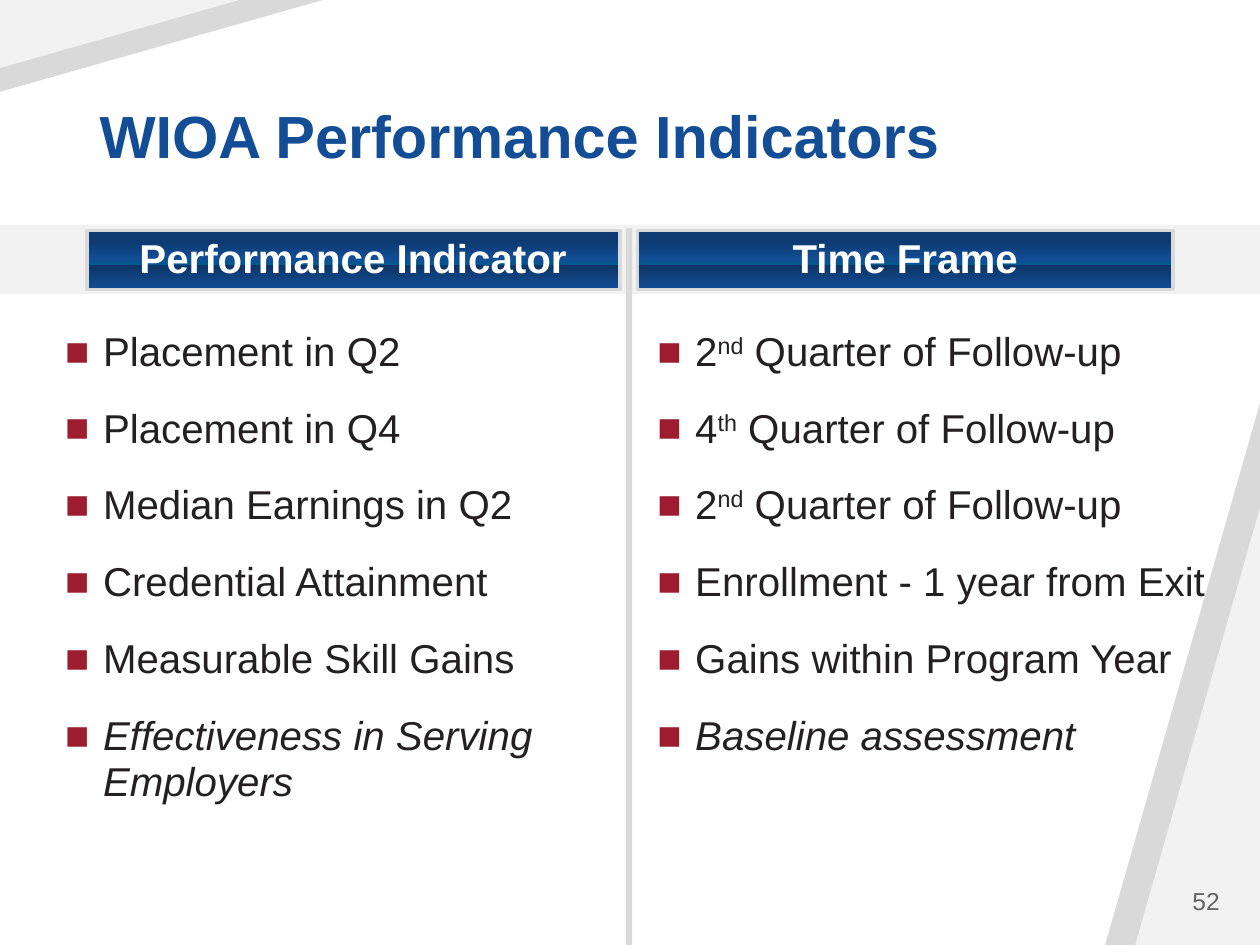
import pptx
import pptx.util
import pptx.dml.color
import pptx.enum.shapes
import pptx.enum.text
import pptx.oxml
import pptx.oxml.ns
from lxml import etree

Pt = pptx.util.Pt
ALIGN = pptx.enum.text.PP_ALIGN
ANCHOR = pptx.enum.text.MSO_ANCHOR
RECT = pptx.enum.shapes.MSO_SHAPE.RECTANGLE

# Content: items are lists of (text, style) runs
TITLE = "WIOA Performance Indicators"
PAGE = "52"
REST = (" Quarter of Follow-up", "")
COLS = [
    {"head": "Performance Indicator", "bar": (49.7, 304.6), "body": (30.2, 303.8),
     "items": [
         [("Placement in Q2", "")],
         [("Placement in Q4", "")],
         [("Median Earnings in Q2", "")],
         [("Credential Attainment", "")],
         [("Measurable Skill Gains", "")],
         [("Effectiveness in Serving Employers", "italic")]]},
    {"head": "Time Frame", "bar": (364.3, 306), "body": (368.6, 339.8),
     "items": [
         [("2", ""), ("nd", "super"), REST],
         [("4", ""), ("th", "super"), REST],
         [("2", ""), ("nd", "super"), REST],
         [("Enrollment - 1 year from Exit", "")],
         [("Gains within Program Year", "")],
         [("Baseline assessment", "italic")]]},
]

# Look
WIDE, HIGH = 720, 540
GREY, PALE, BLUE = "D9D9D9", "F2F2F2", "124D95"
STOPS = [(19, "0D3A70"), (47, BLUE), (58, "00588F"), (59, "0D3668"), (100, BLUE)]
WEDGES = [
    ([(631.5, HIGH), (WIDE, 230.4), (WIDE, HIGH)], GREY),
    ([(648.7, HIGH), (WIDE, 290.2), (WIDE, HIGH)], PALE),
    ([(0, 0), (184.5, 0), (0, 52.5)], GREY),
    ([(0, 0), (136.8, 0), (0, 38.9)], PALE),
]
BANDS = [((0, 128.5, WIDE, 39.6), PALE), ((357.6, 130.3, 3.6, 409.7), GREY)]


def rgb(code):
    return pptx.dml.color.RGBColor.from_string(code)


def paint(shape, code):
    shape.shadow.inherit = False
    shape.fill.solid()
    shape.fill.fore_color.rgb = rgb(code)
    shape.line.fill.background()


def style(run, size, code, bold=False):
    font = run.font
    font.name, font.size, font.bold = "Arial", Pt(size), bold
    font.color.rgb = rgb(code)


def place(shape, box):
    shape.left, shape.top, shape.width, shape.height = map(Pt, box)


def blend(shape):
    """Fill with the five-stop vertical gradient."""
    shape.fill.gradient()
    shape.fill.gradient_angle = 270
    stops = shape._element.spPr.find(".//" + pptx.oxml.ns.qn("a:gsLst"))
    for old in list(stops):
        stops.remove(old)
    for pos, code in STOPS:
        stop = etree.SubElement(stops, pptx.oxml.ns.qn("a:gs"), pos=str(pos * 1000))
        etree.SubElement(stop, pptx.oxml.ns.qn("a:srgbClr"), val=code)


def bullet(para):
    props = para._p.get_or_add_pPr()
    props.set("marL", str(Pt(21.6)))
    props.set("indent", str(-Pt(21.6)))
    color = etree.SubElement(props, pptx.oxml.ns.qn("a:buClr"))
    etree.SubElement(color, pptx.oxml.ns.qn("a:srgbClr"), val="9E1C30")
    etree.SubElement(props, pptx.oxml.ns.qn("a:buFont"), typeface="Arial")
    etree.SubElement(props, pptx.oxml.ns.qn("a:buChar"), char="■")


def header(shapes, text, left, width):
    bar = shapes.add_shape(RECT, Pt(left), Pt(131.8), Pt(width), Pt(33.8))
    bar.shadow.inherit = False
    blend(bar)
    bar.line.color.rgb = rgb(GREY)
    bar.line.width = Pt(2)
    frame = bar.text_frame
    frame.margin_left = frame.margin_right = Pt(3.6)
    frame.margin_top = frame.margin_bottom = Pt(4.3)
    frame.vertical_anchor = ANCHOR.MIDDLE
    frame.text = text
    para = frame.paragraphs[0]
    para.alignment, para.line_spacing = ALIGN.CENTER, 0.9
    style(para.runs[0], 23, "FFFFFF", True)


def listing(shapes, items, left, width):
    frame = shapes.add_textbox(Pt(left), Pt(185), Pt(width), Pt(302.4)).text_frame
    frame.word_wrap = True
    for num, parts in enumerate(items):
        para = frame.add_paragraph() if num else frame.paragraphs[0]
        para.line_spacing = 0.94
        if num:
            para.space_before = Pt(18)
        bullet(para)
        for text, kind in parts:
            run = para.add_run()
            run.text = text
            style(run, 23, "242021")
            if kind == "italic":
                run.font.italic = True
            elif kind == "super":
                run.font._element.set("baseline", "30000")


def main():
    deck = pptx.Presentation()
    deck.slide_width, deck.slide_height = Pt(WIDE), Pt(HIGH)
    slide = deck.slides.add_slide(deck.slide_layouts[5])
    shapes = slide.shapes

    # Backdrop
    for points, code in WEDGES:
        start, *others = [(Pt(x), Pt(y)) for x, y in points]
        build = shapes.build_freeform(*start)
        build.add_line_segments(others, close=True)
        paint(build.convert_to_shape(), code)
    for box, code in BANDS:
        paint(shapes.add_shape(RECT, *map(Pt, box)), code)

    # Title
    title = shapes.title
    place(title, (49.7, 18.7, 620.6, 82.8))
    frame = title.text_frame
    frame.text = TITLE
    frame.vertical_anchor = ANCHOR.BOTTOM
    para = frame.paragraphs[0]
    para.alignment, para.line_spacing = ALIGN.LEFT, 0.9
    style(para.runs[0], 34, BLUE, True)

    # Columns
    for col in COLS:
        header(shapes, col["head"], *col["bar"])
        listing(shapes, col["items"], *col["body"])

    # Page number
    frame = shapes.add_textbox(Pt(645.1), Pt(500.4), Pt(59), Pt(28.8)).text_frame
    frame.word_wrap = True
    frame.vertical_anchor = ANCHOR.MIDDLE
    frame.text = PAGE
    frame.paragraphs[0].alignment = ALIGN.RIGHT
    style(frame.paragraphs[0].runs[0], 14, "646464")

    deck.save("out.pptx")


if __name__ == "__main__":
    main()
